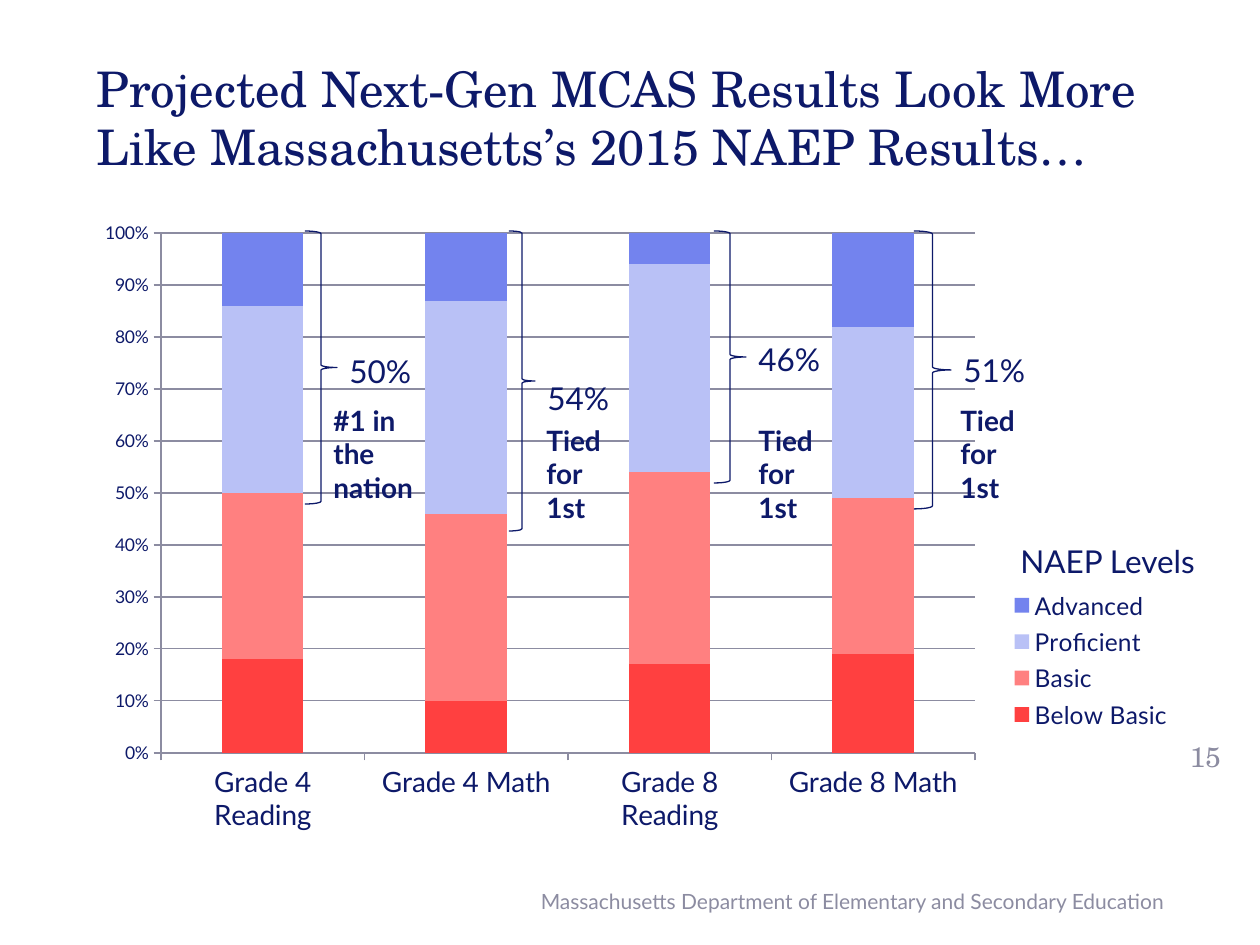
from lxml import etree
from pptx import Presentation
from pptx.chart.data import CategoryChartData
from pptx.dml.color import RGBColor
from pptx.enum.chart import XL_CHART_TYPE, XL_LEGEND_POSITION, XL_TICK_MARK
from pptx.enum.shapes import MSO_SHAPE
from pptx.enum.text import MSO_ANCHOR, PP_ALIGN
from pptx.oxml.ns import qn
from pptx.util import Emu, Pt

PX = 914400 / 126
SANS, SERIF = "Lato", "TeX Gyre Schola"
NAVY, GRAY = "0D1969", "8C8CA1"
LEFT, CENTER, RIGHT = PP_ALIGN.LEFT, PP_ALIGN.CENTER, PP_ALIGN.RIGHT
TOP, MIDDLE = MSO_ANCHOR.TOP, MSO_ANCHOR.MIDDLE
STACKED = XL_CHART_TYPE.COLUMN_STACKED_100
OUTSIDE = XL_TICK_MARK.OUTSIDE

CATEGORIES = ["Grade 4 Reading", "Grade 4 Math", "Grade 8 Reading", "Grade 8 Math"]
LEVELS = [
    ("Below Basic", [18, 10, 17, 19], "FF4040"),
    ("Basic", [32, 36, 37, 30], "FF8080"),
    ("Proficient", [36, 41, 40, 33], "B9C1F6"),
    ("Advanced", [14, 13, 6, 18], "7383EE"),
]
BRACE_TOP = 231
# Brace left, width and height; share and its top; rank and its left, top and width
RESULTS = [
    (305, 32, 273, "50%", 346, "#1 in the nation", 321, 397, 118),
    (509, 32 - 6, 300, "54%", 373, "Tied for 1st", 534, 417, 96),
    (714, 32, 252, "46%", 334, "Tied for 1st", 746, 417, 96),
    (914, 37, 278, "51%", 345, "Tied for 1st", 948, 397, 96),
]


def px(length):
    return Emu(round(length * PX))


def rgb(color):
    return RGBColor.from_string(color)


def style_font(font, size, color=NAVY, name=SANS, bold=False):
    font.size, font.name, font.bold = Pt(size), name, bold
    font.color.rgb = rgb(color)


def set_text(shape, text, size, color=NAVY, name=SANS, bold=False, align=LEFT, anchor=TOP):
    frame = shape.text_frame
    frame.text = text
    frame.word_wrap = True
    frame.vertical_anchor = anchor
    paragraph = frame.paragraphs[0]
    paragraph.alignment = align
    style_font(paragraph.runs[0].font, size, color, name, bold)


def add_label(slide, box, text, size, **style):
    shape = slide.shapes.add_textbox(*map(px, box))
    set_text(shape, text, size, **style)


def add_title(slide, box, text):
    title = slide.shapes.title
    title.left, title.top, title.width, title.height = map(px, box)
    set_text(title, text, 28, name=SERIF, anchor=MIDDLE)


def set_layout(element, chart_box, box, inner=False):
    """Fix a chart part at a box given in slide px."""
    for old in element.findall(qn("c:layout")):
        element.remove(old)
    layout = etree.Element(qn("c:layout"))
    manual = etree.SubElement(layout, qn("c:manualLayout"))
    left, top, width, height = chart_box
    values = {
        "xMode": "edge",
        "yMode": "edge",
        "x": round((box[0] - left) / width, 4),
        "y": round((box[1] - top) / height, 4),
        "w": round(box[2] / width, 4),
        "h": round(box[3] / height, 4),
    }
    if inner:
        values = {"layoutTarget": "inner", **values}
    for tag, value in values.items():
        etree.SubElement(manual, qn(f"c:{tag}")).set("val", str(value))
    if inner:
        element.insert(0, layout)
    else:
        element.find(qn("c:legendPos")).addnext(layout)


def style_line(line, color, width=0.75):
    line.color.rgb = rgb(color)
    line.width = Pt(width)


def add_levels_chart(slide, box, plot_box, legend_box):
    data = CategoryChartData()
    data.categories = CATEGORIES
    for name, values, _ in LEVELS:
        data.add_series(name, values)
    chart = slide.shapes.add_chart(STACKED, *map(px, box), data).chart
    chart.has_title = False
    style_font(chart.font, 10)

    plot = chart.plots[0]
    plot.gap_width, plot.overlap, plot.vary_by_categories = 150, 100, False
    for series, (_, _, color) in zip(plot.series, LEVELS):
        series.format.fill.solid()
        series.format.fill.fore_color.rgb = rgb(color)

    for axis, size in ((chart.category_axis, 16), (chart.value_axis, 10)):
        axis.major_tick_mark = OUTSIDE
        style_font(axis.tick_labels.font, size)
        style_line(axis.format.line, GRAY)
    value_axis = chart.value_axis
    value_axis.has_major_gridlines = True
    style_line(value_axis.major_gridlines.format.line, GRAY)
    value_axis.tick_labels.number_format = "0%"
    value_axis.tick_labels.number_format_is_linked = False

    chart.has_legend = True
    legend = chart.legend
    legend.position = XL_LEGEND_POSITION.RIGHT
    legend.include_in_layout = False
    style_font(legend.font, 14)
    plot_area = chart.element.find(f".//{qn('c:plotArea')}")
    set_layout(plot_area, box, plot_box, inner=True)
    set_layout(chart.element.find(f".//{qn('c:legend')}"), box, legend_box)


def add_result(slide, left, width, height, share, share_top, rank, rank_left, rank_top, rank_width):
    """Bracket the top two levels of a column and label their share and rank."""
    box = map(px, (left, BRACE_TOP, width, height))
    brace = slide.shapes.add_shape(MSO_SHAPE.RIGHT_BRACE, *box)
    brace.shadow.inherit = False
    brace.fill.background()
    style_line(brace.line, NAVY)
    add_label(slide, (left + width, share_top, 94, 50), share, 18)
    add_label(slide, (rank_left, rank_top, rank_width, 115), rank, 16, bold=True)


def main():
    presentation = Presentation()
    presentation.slide_width, presentation.slide_height = px(1260), px(945)
    slide = presentation.slides.add_slide(presentation.slide_layouts[5])
    add_title(
        slide,
        (84, 38, 1124, 158),
        "Projected Next-Gen MCAS Results Look More Like Massachusetts’s 2015 NAEP Results…",
    )
    add_label(
        slide,
        (431, 876, 746, 50),
        "Massachusetts Department of Elementary and Secondary Education",
        12, color=GRAY, align=RIGHT, anchor=MIDDLE,
    )
    add_levels_chart(slide, (84, 210, 1092, 634), (161, 233, 814, 520), (1006, 584, 170, 152))
    for result in RESULTS:
        add_result(slide, *result)
    add_label(slide, (1008, 536, 210, 50), "NAEP Levels", 18)
    add_label(
        slide, (1169, 725, 73, 63), "15", 16,
        color=GRAY, name=SERIF, align=CENTER, anchor=MIDDLE,
    )
    presentation.save("out.pptx")


if __name__ == "__main__":
    main()
